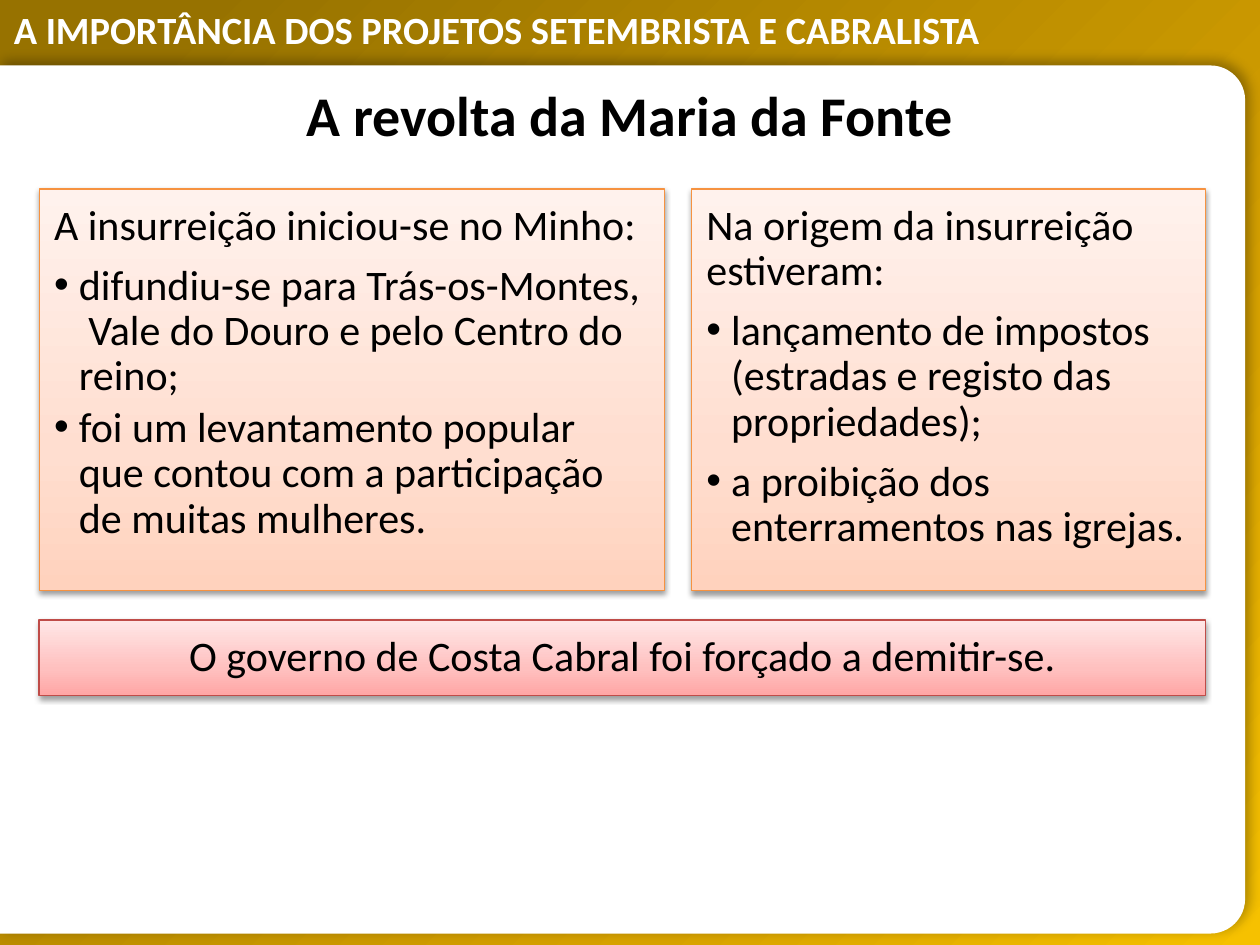
from lxml.etree import SubElement
from pptx import Presentation
from pptx.dml.color import RGBColor
from pptx.enum.shapes import MSO_SHAPE
from pptx.enum.text import MSO_ANCHOR, MSO_AUTO_SIZE, PP_ALIGN
from pptx.oxml.ns import qn
from pptx.util import Cm, Pt

FONT = "Calibri"
BLACK, WHITE = "000000", "FFFFFF"
GOLD = [(9, "977200"), (72, "D7A200"), (100, "F6C100")]
ORANGE = [(0, "FFD2BD"), (35, "FFDED0"), (100, "FFF2ED")]
RED = [(0, "FFA6A5"), (35, "FFC0BF"), (100, "FFE7E7")]
MARGIN, PANEL_TOP, PANEL_HEIGHT = 0.79, 3.81, 8.1
CONTENT_WIDTH, LEFT_WIDTH, RIGHT_WIDTH = 23.51, 12.6, 10.36
RESULT_TOP, RESULT_HEIGHT = 12.5, 1.52


def color(value):
    return RGBColor.from_string(value)


def add_node(parent, tag, **attributes):
    return SubElement(parent, qn(tag), {key: str(value) for key, value in attributes.items()})


def place(shape, left, top, width, height):
    shape.left, shape.top = Cm(left), Cm(top)
    shape.width, shape.height = Cm(width), Cm(height)


def bring_to_front(shape):
    shape.element.getparent().append(shape.element)


def set_gradient(shape, stops, angle):
    shape.fill.gradient()
    shape.fill.gradient_angle = angle
    stop_list = next(shape.element.iter(qn("a:gsLst")))
    for child in list(stop_list):
        stop_list.remove(child)
    for position, value in stops:
        stop = add_node(stop_list, "a:gs", pos=position * 1000)
        add_node(stop, "a:srgbClr", val=value)


def set_shadow(shape, alpha, blur, distance, angle):
    shape.shadow.inherit = False
    effects = next(shape.element.iter(qn("a:effectLst")))
    shadow = add_node(effects, "a:outerShdw", blurRad=Pt(blur), dist=Pt(distance),
                      dir=angle * 60000, algn="ctr", rotWithShape=0)
    shadow_color = add_node(shadow, "a:srgbClr", val=BLACK)
    add_node(shadow_color, "a:alpha", val=alpha * 1000)


def set_bullet(paragraph, bullet):
    properties = paragraph._p.get_or_add_pPr()
    indent = Cm(0.5) if bullet else 0
    properties.set("marL", str(indent))
    properties.set("indent", str(-indent))
    if bullet:
        add_node(properties, "a:buFont", typeface="Arial")
        add_node(properties, "a:buChar", char="•")
    else:
        add_node(properties, "a:buNone")


def write(paragraph, text, size=24, fill=BLACK, bold=False, align=PP_ALIGN.LEFT,
          line_spacing=0.9, space_after=8.4, bullet=False):
    paragraph.alignment = align
    paragraph.line_spacing = line_spacing
    paragraph.space_before = Pt(0)
    paragraph.space_after = Pt(space_after)
    set_bullet(paragraph, bullet)
    run = paragraph.add_run()
    run.text = text
    run.font.name = FONT
    run.font.size = Pt(size)
    run.font.bold = bold
    run.font.color.rgb = color(fill)


def set_frame(shape, anchor, inset=0.3):
    frame = shape.text_frame
    frame.word_wrap = True
    frame.auto_size = MSO_AUTO_SIZE.NONE
    frame.vertical_anchor = anchor
    frame.margin_left = frame.margin_right = Cm(inset)
    frame.margin_top = frame.margin_bottom = Cm(inset)
    return frame


def style_card(shape, stops, line):
    set_gradient(shape, stops, 90)
    shape.line.color.rgb = color(line)
    shape.line.width = Pt(0.75)
    set_shadow(shape, 38, 3.1, 1.6, 90)


def add_backdrop(slide):
    background = slide.shapes.add_shape(MSO_SHAPE.RECTANGLE, 0, 0, Cm(25.4), Cm(19.05))
    background.shadow.inherit = False
    background.line.fill.background()
    set_gradient(background, GOLD, 315)

    top, width, height = 1.32, 25.1, 17.5
    shift = (width - height) / 2
    page = slide.shapes.add_shape(MSO_SHAPE.ROUND_2_SAME_RECTANGLE, Cm(shift),
                                  Cm(top - shift), Cm(height), Cm(width))
    page.rotation = 90
    page.adjustments[0] = 0.04
    page.fill.solid()
    page.fill.fore_color.rgb = color(WHITE)
    page.line.fill.background()
    set_shadow(page, 30, 7, 3, 315)


def add_header(slide, text):
    header = slide.shapes.add_textbox(Cm(0.03), Cm(0.36), Cm(23.42), Cm(0.89))
    frame = set_frame(header, MSO_ANCHOR.TOP)
    frame.margin_left = frame.margin_right = Cm(0.25)
    frame.margin_top = frame.margin_bottom = Cm(0.13)
    write(frame.paragraphs[0], text, size=22, fill=WHITE, bold=True,
          line_spacing=Pt(16), space_after=0)


def fill_panel(shape, left, width, lead, items, item_gap):
    place(shape, left, PANEL_TOP, width, PANEL_HEIGHT)
    style_card(shape, ORANGE, "F69240")
    bring_to_front(shape)
    frame = set_frame(shape, MSO_ANCHOR.TOP)
    write(frame.paragraphs[0], lead)
    for item in items:
        write(frame.add_paragraph(), item, space_after=item_gap, bullet=True)


def add_result(slide, text):
    result = slide.shapes.add_shape(MSO_SHAPE.RECTANGLE, Cm(MARGIN), Cm(RESULT_TOP),
                                    Cm(CONTENT_WIDTH), Cm(RESULT_HEIGHT))
    style_card(result, RED, "BF4C48")
    frame = set_frame(result, MSO_ANCHOR.MIDDLE)
    write(frame.paragraphs[0], text, align=PP_ALIGN.CENTER, space_after=0)


def fill_title(title, text):
    place(title, 1.27, 1.42, 22.86, 1.75)
    bring_to_front(title)
    frame = set_frame(title, MSO_ANCHOR.MIDDLE, inset=0.13)
    write(frame.paragraphs[0], text, size=32, bold=True, align=PP_ALIGN.CENTER,
          line_spacing=1.0, space_after=0)


def main():
    presentation = Presentation()
    presentation.slide_width, presentation.slide_height = Cm(25.4), Cm(19.05)
    slide = presentation.slides.add_slide(presentation.slide_layouts[3])
    title, left_panel, right_panel = slide.placeholders

    add_backdrop(slide)
    add_header(slide, "A IMPORTÂNCIA DOS PROJETOS SETEMBRISTA E CABRALISTA")
    fill_panel(right_panel, MARGIN + CONTENT_WIDTH - RIGHT_WIDTH, RIGHT_WIDTH,
               "Na origem da insurreição estiveram:",
               ["lançamento de impostos (estradas e registo das propriedades);",
                "a proibição dos enterramentos nas igrejas."], 8.4)
    fill_panel(left_panel, MARGIN, LEFT_WIDTH,
               "A insurreição iniciou-se no Minho:",
               ["difundiu-se para Trás-os-Montes,  Vale do Douro e pelo Centro do reino;",
                "foi um levantamento popular que contou com a participação de muitas mulheres."],
               3.6)
    add_result(slide, "O governo de Costa Cabral foi forçado a demitir-se.")
    fill_title(title, "A revolta da Maria da Fonte")
    presentation.save("out.pptx")


if __name__ == "__main__":
    main()
